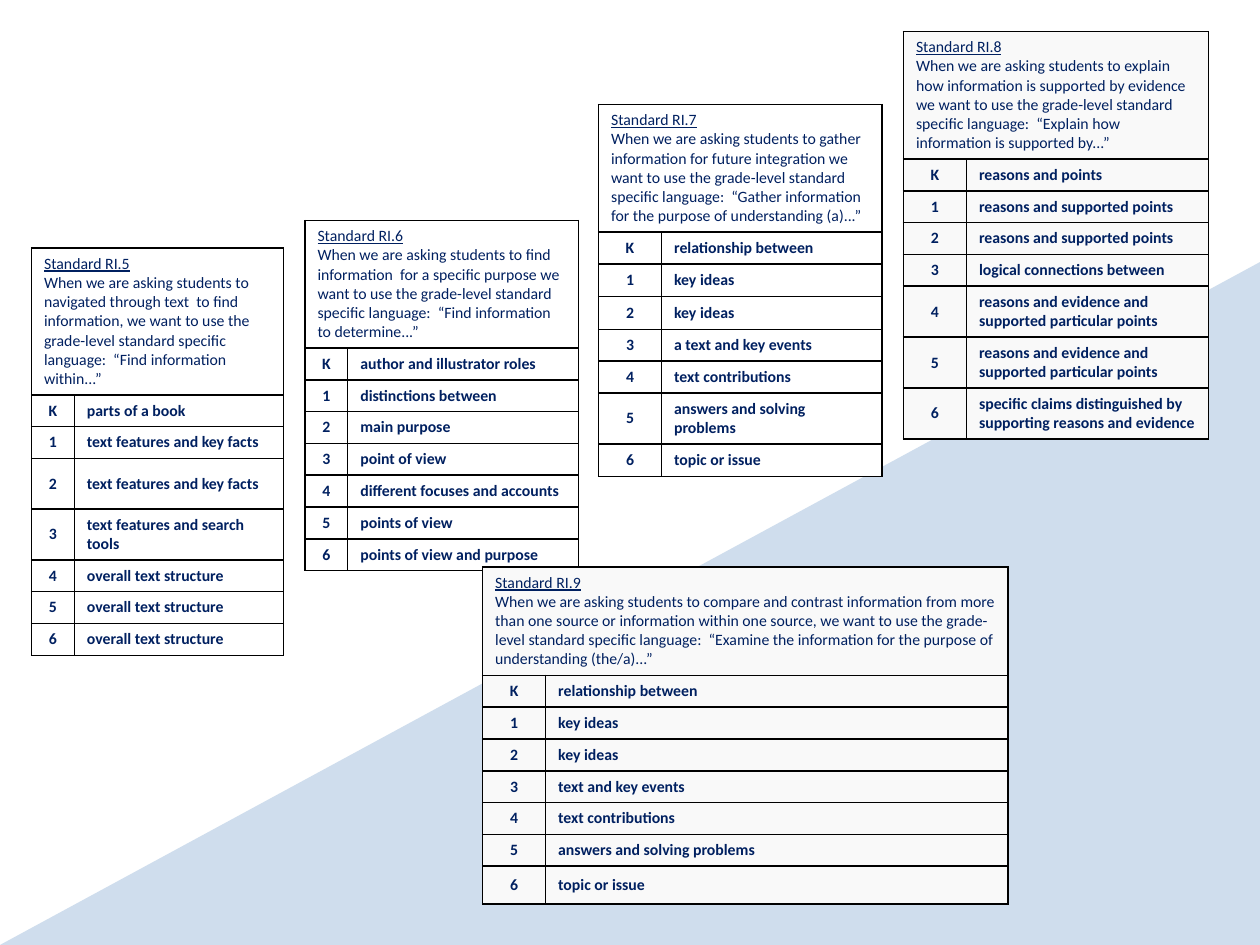
from pptx import Presentation
from pptx.dml.color import RGBColor
from pptx.enum import shapes, text
from pptx.oxml import parse_xml
from pptx.oxml.ns import nsdecls
from pptx.util import Inches, Pt

COLORS = {"navy": "002060", "border": "000000", "white": "FFFFFF",
          "gray": "F9F9F9", "triangle": "CFDDED"}
GRADES = ["K", "1", "2", "3", "4", "5", "6"]
LINE, PADDING = 0.15, 0.1
ROW, TALL = LINE + PADDING, 2 * LINE + PADDING

# box: left, top, width; heights: only the grade rows that differ from ROW
STANDARDS = [
    dict(number=5, box=(0.25, 1.97, 2), grade_width=0.34, intro_lines=7, fill="white",
         intro="When we are asking students to navigated through text  to find information, "
               "we want to use the grade-level standard specific language:  "
               "“Find information within...”",
         phrases=["parts of a book", "text features and key facts", "text features and key facts",
                  "text features and search tools"] + ["overall text structure"] * 3,
         heights={"2": TALL, "3": TALL}),
    dict(number=6, box=(2.42, 1.75, 2.17), grade_width=0.34, intro_lines=6, fill="white",
         intro="When we are asking students to find information  for a specific purpose "
               "we want to use the grade-level standard specific language:  "
               "“Find information to determine...”",
         phrases=["author and illustrator roles", "distinctions between", "main purpose",
                  "point of view", "different focuses and accounts", "points of view",
                  "points of view and purpose"],
         heights={}),
    dict(number=7, box=(4.75, 0.83, 2.25), grade_width=0.5, intro_lines=6, fill="white",
         intro="When we are asking students to gather information for future integration "
               "we want to use the grade-level standard specific language:  "
               "“Gather information for the purpose of understanding (a)...”",
         phrases=["relationship between", "key ideas", "key ideas", "a text and key events",
                  "text contributions", "answers and solving problems", "topic or issue"],
         heights={"1": 0.26, "2": 0.26, "5": TALL, "6": 0.26}),
    dict(number=8, box=(7.17, 0.25, 2.42), grade_width=0.5, intro_lines=6, fill="gray",
         intro="When we are asking students to explain how information is supported by evidence "
               "we want to use the grade-level standard specific language:  "
               "“Explain how information is supported by...”",
         phrases=["reasons and points", "reasons and supported points",
                  "reasons and supported points", "logical connections between",
                  "reasons and evidence and supported particular points",
                  "reasons and evidence and supported particular points",
                  "specific claims distinguished by  supporting reasons and evidence"],
         heights={"4": TALL, "5": TALL, "6": TALL}),
    dict(number=9, box=(3.83, 4.5, 4.17), grade_width=0.5, intro_lines=5, fill="gray",
         intro="When we are asking students to compare and contrast information from more than "
               "one source or information within one source, we want to use the grade-level "
               "standard specific language:  “Examine the information for the purpose of "
               "understanding (the/a)...”",
         phrases=["relationship between", "key ideas", "key ideas", "text and key events",
                  "text contributions", "answers and solving problems", "topic or issue"],
         heights={"6": 0.3}),
]


def write(paragraph, words, bold=False, underline=False, align=text.PP_ALIGN.LEFT):
    paragraph.alignment = align
    run = paragraph.add_run()
    run.text = words
    font = run.font
    font.name, font.size = "Calibri", Pt(9)
    font.bold, font.underline = bold, underline
    font.color.rgb = RGBColor.from_string(COLORS["navy"])


def style_cell(cell, fill):
    """Draw the four borders, then the fill, in the order the schema requires."""
    properties = cell._tc.get_or_add_tcPr()
    for side in "LRTB":
        properties.append(parse_xml(
            f'<a:ln{side} {nsdecls("a")} w="{Pt(1)}"><a:solidFill>'
            f'<a:srgbClr val="{COLORS["border"]}"/></a:solidFill></a:ln{side}>'))
    cell.fill.solid()
    cell.fill.fore_color.rgb = RGBColor.from_string(COLORS[fill])


def add_background(slide, left, top, width, height):
    triangle = slide.shapes.add_shape(
        shapes.MSO_SHAPE.RIGHT_TRIANGLE,
        Inches(left), Inches(top), Inches(width), Inches(height))
    triangle._element.spPr.xfrm.set("flipH", "1")
    triangle.shadow.inherit = False
    triangle.fill.solid()
    triangle.fill.fore_color.rgb = RGBColor.from_string(COLORS["triangle"])
    triangle.line.fill.background()


def add_standard(slide, number, box, grade_width, intro_lines, fill, intro, phrases, heights):
    """One standard: an introduction across the top, then a phrase for each grade."""
    left, top, width = box
    row_heights = [intro_lines * LINE + PADDING] + [heights.get(g, ROW) for g in GRADES]
    table = slide.shapes.add_table(
        len(row_heights), 2, Inches(left), Inches(top),
        Inches(width), Inches(sum(row_heights))).table
    table.first_row = table.horz_banding = False
    for column, column_width in zip(table.columns, (grade_width, width - grade_width)):
        column.width = Inches(column_width)
    for row, height in zip(table.rows, row_heights):
        row.height = Inches(height)
    for cell in table.iter_cells():
        style_cell(cell, fill)

    heading = table.cell(0, 0)
    heading.merge(table.cell(0, 1))
    write(heading.text_frame.paragraphs[0], f"Standard RI.{number}", underline=True)
    write(heading.text_frame.add_paragraph(), intro)

    for index, entry in enumerate(zip(GRADES, phrases), start=1):
        for column, words in enumerate(entry):
            cell = table.cell(index, column)
            cell.vertical_anchor = text.MSO_ANCHOR.MIDDLE
            align = text.PP_ALIGN.LEFT if column else text.PP_ALIGN.CENTER
            write(cell.text_frame.paragraphs[0], words, bold=True, align=align)


def main():
    deck = Presentation()
    deck.slide_width, deck.slide_height = Inches(10), Inches(7.5)
    slide = deck.slides.add_slide(deck.slide_layouts[6])
    add_background(slide, 0, 2.08, 10, 5.42)
    for standard in STANDARDS:
        add_standard(slide, **standard)
    deck.save("out.pptx")


if __name__ == "__main__":
    main()
